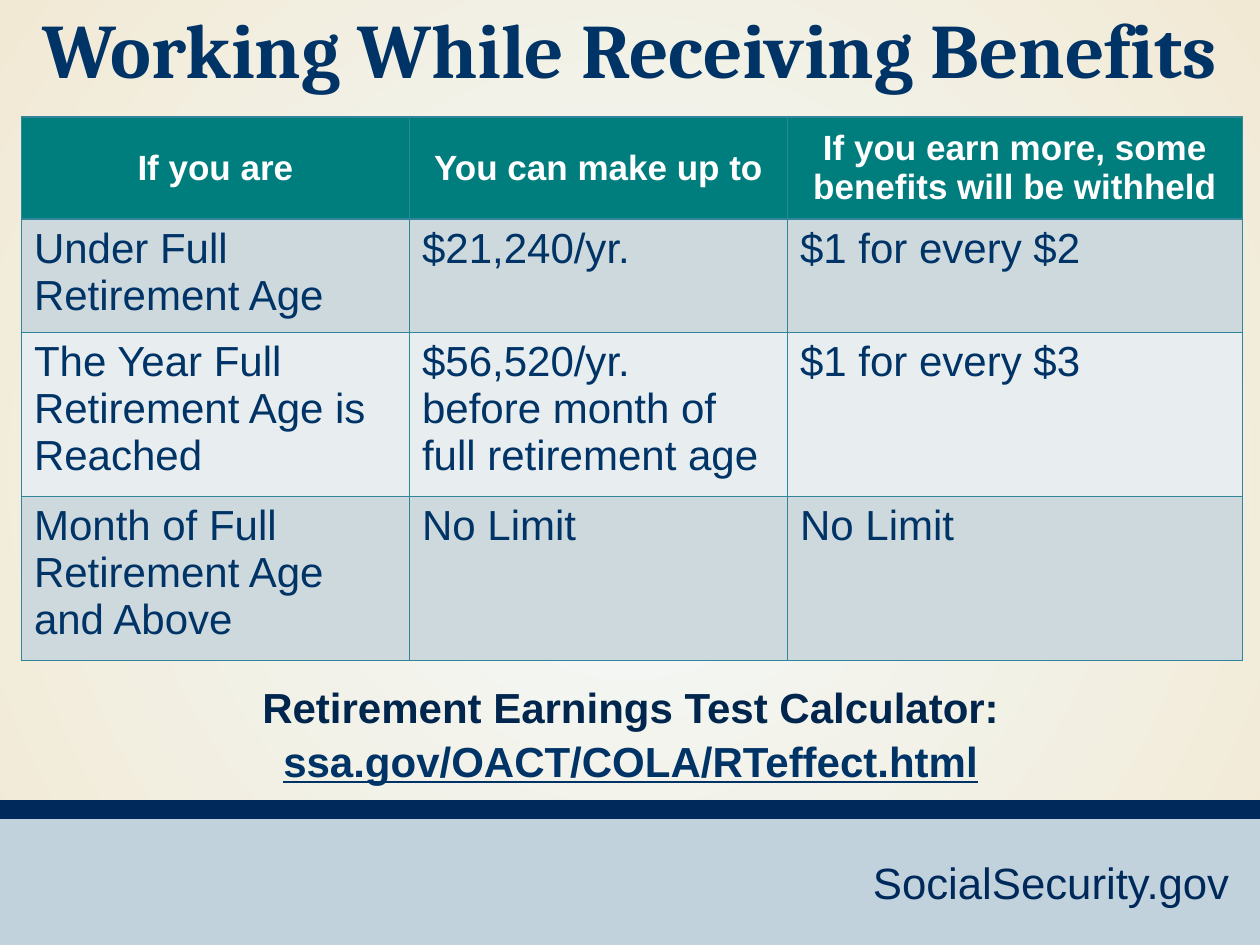
from dataclasses import dataclass

from lxml.etree import SubElement
from pptx import Presentation
from pptx.dml.color import RGBColor
from pptx.enum.shapes import MSO_SHAPE
from pptx.enum.text import MSO_ANCHOR, PP_ALIGN
from pptx.oxml import parse_xml
from pptx.oxml.ns import nsdecls, qn
from pptx.util import Inches, Pt


@dataclass(frozen=True)
class Theme:
    """Colours, fonts and type sizes of the slide."""
    navy: str = "003366"
    deep_navy: str = "00264D"
    stripe: str = "00295B"
    footer: str = "C1D2DC"
    header: str = "007D7D"
    bands: tuple = ("CED9DE", "E8EDEF")
    border: str = "31859B"
    white: str = "FFFFFF"
    glow: str = "F3FAFB"
    cream: str = "F2E9D5"
    heading_font: str = "Cambria"
    body_font: str = "Arial"
    title_size: int = 44
    footer_size: int = 25
    body_size: int = 24
    header_size: int = 20


THEME = Theme()
HEADERS = ["If you are", "You can make up to",
           "If you earn more, some benefits will be withheld"]
LIMITS = [
    ["Under Full Retirement Age", "$21,240/yr.", "$1 for every $2"],
    ["The Year Full Retirement Age is Reached",
     "$56,520/yr. \nbefore month of full retirement age", "$1 for every $3"],
    ["Month of Full Retirement Age \nand Above", "No Limit", "No Limit"],
]


def style_paragraph(paragraph, size, color, bold=False, font=THEME.body_font, align=None):
    """Set the font and alignment of a paragraph."""
    paragraph.font.name = font
    paragraph.font.size = Pt(size)
    paragraph.font.bold = bold
    paragraph.font.color.rgb = RGBColor.from_string(color)
    paragraph.alignment = align


def add_text_frame(slide, box, top_inset=0.05):
    """Add a wrapping text box and return its text frame."""
    frame = slide.shapes.add_textbox(*map(Inches, box)).text_frame
    frame.word_wrap = True
    frame.margin_top = Inches(top_inset)
    return frame


def paint_background(slide):
    """Fill the background with a gradient spreading from the centre."""
    fill = slide.background.fill
    fill.gradient()
    for stop, color, position in zip(fill.gradient_stops, (THEME.glow, THEME.cream), (0, 1)):
        stop.color.rgb = RGBColor.from_string(color)
        stop.position = position
    linear = next(slide.element.iter(qn("a:lin")))
    gradient = linear.getparent()
    gradient.remove(linear)
    circle = SubElement(gradient, qn("a:path"), path="circle")
    SubElement(circle, qn("a:fillToRect"), l="50000", t="50000", r="50000", b="50000")


def add_band(slide, box, color):
    """Add a plain filled rectangle."""
    band = slide.shapes.add_shape(MSO_SHAPE.RECTANGLE, *map(Inches, box))
    band.shadow.inherit = False
    band.fill.solid()
    band.fill.fore_color.rgb = RGBColor.from_string(color)
    band.line.fill.background()


def add_footer(slide, box):
    """Add the footer panel, its dark stripe and the site address."""
    left, top, width, height = box
    add_band(slide, (left, top + 0.1, width, height - 0.1), THEME.footer)
    add_band(slide, (left, top, width, 0.15), THEME.stripe)
    frame = add_text_frame(slide, (left + width - 3.17, top + 0.39, 3.07, 0.52))
    paragraph = frame.paragraphs[0]
    paragraph.text = "SocialSecurity.gov"
    style_paragraph(paragraph, THEME.footer_size, THEME.stripe)


def add_title(slide, box):
    """Add the centred slide title."""
    paragraph = add_text_frame(slide, box, 0.01).paragraphs[0]
    paragraph.text = "Working While Receiving Benefits"
    style_paragraph(paragraph, THEME.title_size, THEME.navy, True,
                    THEME.heading_font, PP_ALIGN.CENTER)


def add_cell_borders(cell):
    """Draw a thin line on all four sides of a cell."""
    properties = cell._tc.get_or_add_tcPr()
    for index, side in enumerate("LRTB"):
        properties.insert(index, parse_xml(
            f'<a:ln{side} {nsdecls("a")} w="{Pt(1)}"><a:solidFill>'
            f'<a:srgbClr val="{THEME.border}"/></a:solidFill></a:ln{side}>'))


def fill_cell(cell, text, row_index):
    """Write and style one table cell as a header or a body cell."""
    paragraph = cell.text_frame.paragraphs[0]
    paragraph.text = text
    if row_index == 0:
        color = THEME.header
        cell.vertical_anchor = MSO_ANCHOR.MIDDLE
        style_paragraph(paragraph, THEME.header_size, THEME.white, True, align=PP_ALIGN.CENTER)
    else:
        color = THEME.bands[(row_index - 1) % 2]
        style_paragraph(paragraph, THEME.body_size, THEME.navy)
    cell.fill.solid()
    cell.fill.fore_color.rgb = RGBColor.from_string(color)
    add_cell_borders(cell)


def add_limits_table(slide, box):
    """Add the table of earnings limits."""
    rows = [HEADERS, *LIMITS]
    table = slide.shapes.add_table(len(rows), len(HEADERS), *map(Inches, box)).table
    for column, width in zip(table.columns, (3.08, 3, 3.61)):
        column.width = Inches(width)
    for row, height in zip(table.rows, (0.81, 0.84, 1.21, 1.21)):
        row.height = Inches(height)
    for row_index, texts in enumerate(rows):
        for column_index, text in enumerate(texts):
            fill_cell(table.cell(row_index, column_index), text, row_index)


def add_calculator_note(slide, box):
    """Add the calculator label and its underlined address."""
    frame = add_text_frame(slide, box, 0.08)
    label, address = frame.paragraphs[0], frame.add_paragraph()
    label.text = "Retirement Earnings Test Calculator:"
    address.text = "ssa.gov/OACT/COLA/RTeffect.html"
    for paragraph, color in ((label, THEME.deep_navy), (address, THEME.navy)):
        style_paragraph(paragraph, THEME.body_size, color, True, align=PP_ALIGN.CENTER)
    address.font.underline = True
    address.space_before = Pt(2)


def main():
    """Build and save the presentation."""
    presentation = Presentation()
    presentation.slide_width, presentation.slide_height = Inches(10), Inches(7.5)
    slide = presentation.slides.add_slide(presentation.slide_layouts[6])
    paint_background(slide)
    add_footer(slide, (0, 6.35, 10, 1.15))
    add_title(slide, (0, 0, 10, 0.76))
    add_limits_table(slide, (0.17, 0.93, 9.69, 4.07))
    add_calculator_note(slide, (0.43, 5.33, 9.15, 1))
    presentation.save("out.pptx")


if __name__ == "__main__":
    main()
